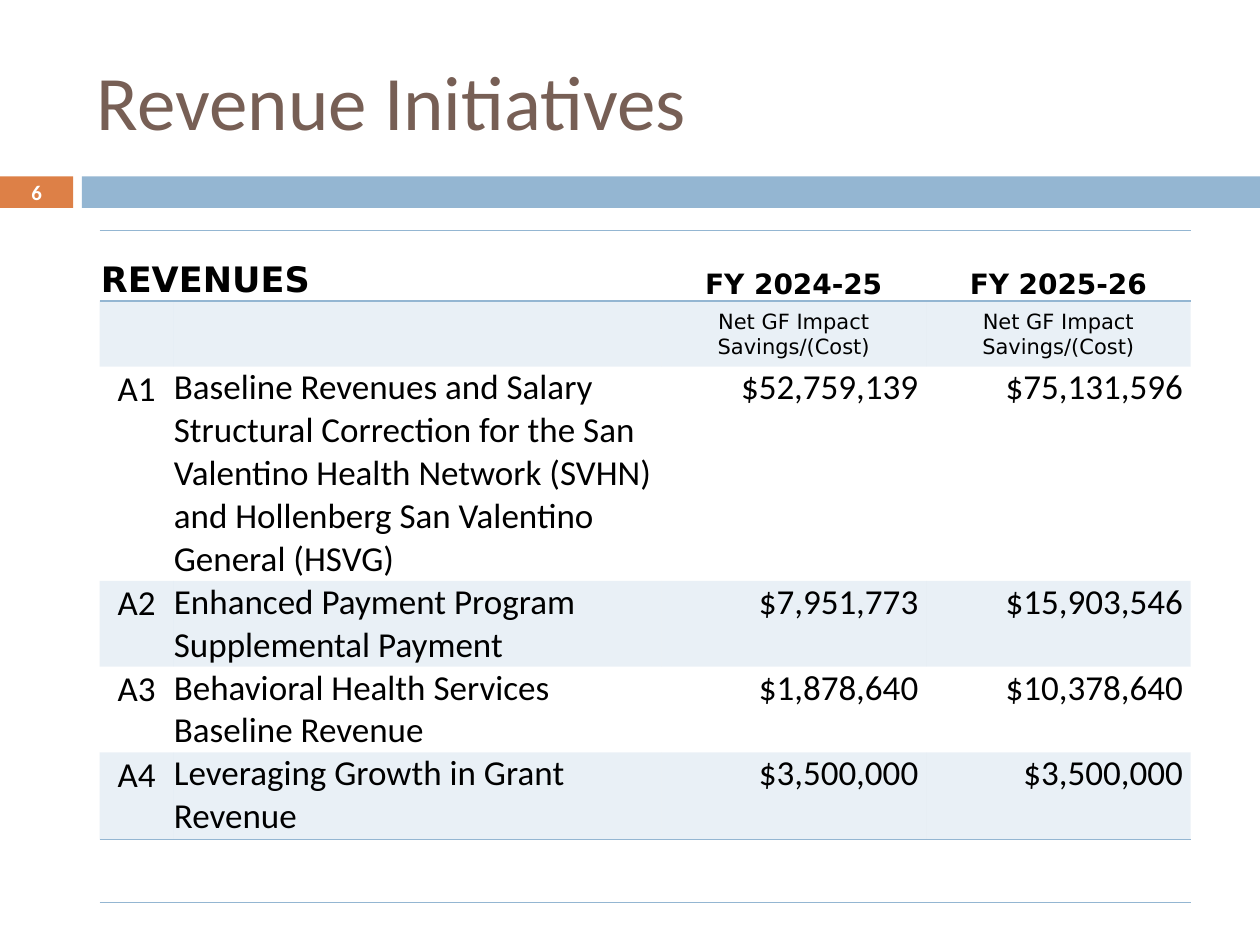
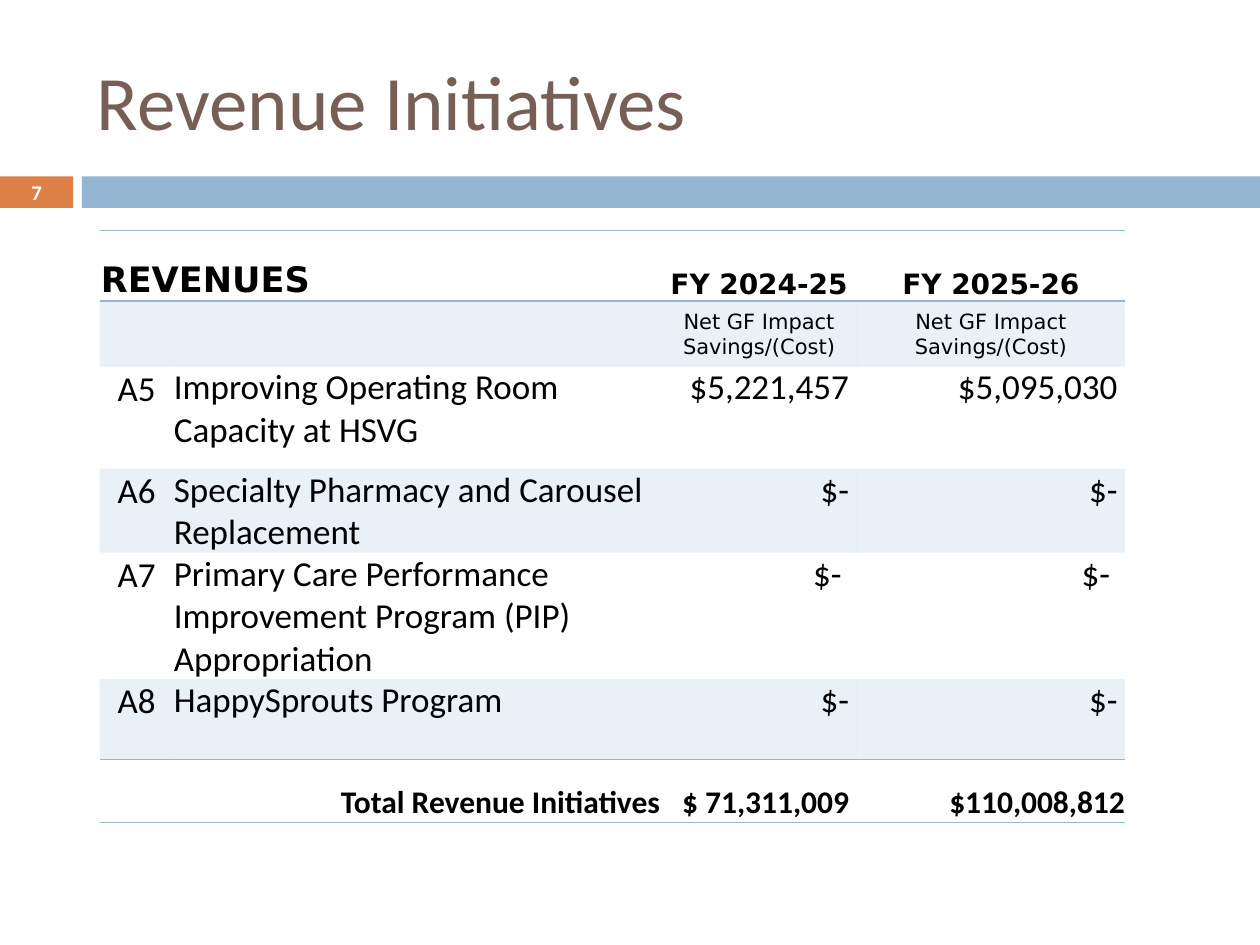
"""Builds two slides of revenue initiative tables."""
from dataclasses import dataclass

from lxml import etree
from pptx import Presentation
from pptx.dml.color import RGBColor
from pptx.enum.shapes import MSO_SHAPE
from pptx.enum.text import MSO_ANCHOR, PP_ALIGN
from pptx.oxml.ns import qn
from pptx.util import Inches, Pt

BLUE = RGBColor(0x94, 0xB6, 0xD2)
ORANGE = RGBColor(0xDD, 0x80, 0x47)
BROWN = RGBColor(0x77, 0x5F, 0x55)
BLACK = RGBColor(0, 0, 0)
WHITE = RGBColor(0xFF, 0xFF, 0xFF)

BODY_FONT = "Calibri"
HEAD_FONT = "DejaVu Sans"
LEFT, CENTER, RIGHT = PP_ALIGN.LEFT, PP_ALIGN.CENTER, PP_ALIGN.RIGHT
TOP, MIDDLE, BOTTOM = MSO_ANCHOR.TOP, MSO_ANCHOR.MIDDLE, MSO_ANCHOR.BOTTOM
RECTANGLE = MSO_SHAPE.RECTANGLE

TITLE = "Revenue Initiatives"
YEARS = ("FY 2024-25", "FY 2025-26")
IMPACT = "Net GF Impact\nSavings/(Cost)"
TINT_ALPHA = 20
PAD = 0.01
AMOUNT_GAP = 0.06


@dataclass(frozen=True)
class Initiative:
    """One revenue row with its amount for each year."""
    code: str
    name: str
    amounts: tuple[str, str]
    gap: float = AMOUNT_GAP


@dataclass(frozen=True)
class RevenueSlide:
    """Content and table dimensions of one slide."""
    number: int
    col_widths: tuple[float, ...]
    row_heights: tuple[float, ...]
    table_height: float
    initiatives: tuple[Initiative, ...]
    total: tuple[str, ...] = ()


SLIDES = (
    RevenueSlide(
        6, (0.59, 3.87, 2.1, 2.1), (0.56, 0.52, 0.81, 0.41, 0.49, 0.69, 0.5), 5.26,
        (
            Initiative("A1", "Baseline Revenues and Salary Structural Correction for the "
                       "San Valentino Health Network (SVHN) and Hollenberg San Valentino "
                       "General (HSVG)", ("$52,759,139", "$75,131,596")),
            Initiative("A2", "Enhanced Payment Program Supplemental Payment",
                       ("$7,951,773", "$15,903,546")),
            Initiative("A3", "Behavioral Health Services Baseline Revenue",
                       ("$1,878,640", "$10,378,640")),
            Initiative("A4", "Leveraging Growth in Grant Revenue",
                       ("$3,500,000", "$3,500,000")),
        ),
    ),
    RevenueSlide(
        7, (0.59, 3.87, 1.55, 2.13), (0.56, 0.52, 0.81, 0.41, 0.49, 0.64, 0.5), 4.7,
        (
            Initiative("A5", "Improving Operating Room Capacity at HSVG",
                       ("$5,221,457", "$5,095,030")),
            Initiative("A6", "Specialty Pharmacy and Carousel Replacement", ("$-", "$-")),
            Initiative("A7", "Primary Care Performance Improvement Program (PIP) "
                       "Appropriation", ("$-", "$-"), gap=2 * AMOUNT_GAP),
            Initiative("A8", "HappySprouts Program", ("$-", "$-")),
        ),
        ("Total Revenue Initiatives", "$ 71,311,009", "$110,008,812"),
    ),
)


def write(tf, text: str, *, size: float = 20, font: str = BODY_FONT,
          color: RGBColor = BLACK, bold: bool = False, align=LEFT) -> None:
    """Fill a text frame with one paragraph per line of text."""
    for i, line in enumerate(text.split("\n")):
        p = tf.add_paragraph() if i else tf.paragraphs[0]
        p.alignment = align
        r = p.add_run()
        r.text = line
        r.font.size = Pt(size)
        r.font.name = font
        r.font.bold = bold
        r.font.color.rgb = color


def write_cell(cell, text: str, *, anchor=TOP, pad: float = 0, right: float | None = None,
               **style) -> None:
    """Write text into a table cell with its anchor and margins."""
    cell.vertical_anchor = anchor
    cell.margin_left = cell.margin_top = Inches(pad)
    cell.margin_right = Inches(pad if right is None else right)
    cell.margin_bottom = 0
    write(cell.text_frame, text, **style)


def add_band(s, left: float, width: float, color: RGBColor) -> None:
    """Draw one piece of the band below the title."""
    sp = s.shapes.add_shape(RECTANGLE, Inches(left), Inches(1.4), Inches(width), Inches(0.25))
    sp.shadow.inherit = False
    sp.fill.solid()
    sp.fill.fore_color.rgb = color
    sp.line.fill.background()


def add_text(s, text: str, box: tuple[float, ...], **style) -> None:
    """Add a wrapping, vertically centred text box."""
    tf = s.shapes.add_textbox(*map(Inches, box)).text_frame
    tf.word_wrap = True
    tf.vertical_anchor = MIDDLE
    write(tf, text, **style)


def set_borders(cell, ruled: set[str]) -> None:
    """Rule the named sides of a cell and clear the others."""
    tc_pr = cell._tc.get_or_add_tcPr()
    for side in ("L", "R", "T", "B"):
        ln = etree.SubElement(tc_pr, qn(f"a:ln{side}"), w=str(Pt(1)))
        if side in ruled:
            fill = etree.SubElement(ln, qn("a:solidFill"))
            etree.SubElement(fill, qn("a:srgbClr"), val=str(BLUE))
        else:
            etree.SubElement(ln, qn("a:noFill"))


def set_tint(cell) -> None:
    """Fill a cell with translucent blue."""
    cell.fill.solid()
    cell.fill.fore_color.rgb = BLUE
    color = cell._tc.tcPr.find(f"{qn('a:solidFill')}/{qn('a:srgbClr')}")
    etree.SubElement(color, qn("a:alpha"), val=str(TINT_ALPHA * 1000))


def format_grid(table) -> None:
    """Apply rules around the header and total rows and tint alternate rows."""
    last = len(table.rows) - 1
    rules = {0, 1, last, last + 1}
    for row in range(last + 1):
        ruled = {side for side, edge in (("T", row), ("B", row + 1)) if edge in rules}
        for col in range(len(table.columns)):
            cell = table.cell(row, col)
            set_borders(cell, ruled)
            if row % 2:
                set_tint(cell)
            else:
                cell.fill.background()
    for row in (0, last):
        table.cell(row, 0).merge(table.cell(row, 1))


def add_revenue_table(s, data: RevenueSlide) -> None:
    """Add the table of initiatives and its optional total."""
    sp = s.shapes.add_table(len(data.row_heights), len(data.col_widths), Inches(0.79),
                            Inches(1.83), Inches(sum(data.col_widths)),
                            Inches(data.table_height))
    table = sp.table
    table.first_row = table.horz_banding = False
    for column, width in zip(table.columns, data.col_widths):
        column.width = Inches(width)
    for row, height in zip(table.rows, data.row_heights):
        row.height = Inches(height)
    sp.height = Inches(data.table_height)
    format_grid(table)

    write_cell(table.cell(0, 0), "REVENUES", anchor=BOTTOM, pad=PAD, font=HEAD_FONT, bold=True)
    for col, year in enumerate(YEARS, 2):
        write_cell(table.cell(0, col), year, anchor=BOTTOM, pad=PAD, size=16,
                   font=HEAD_FONT, bold=True, align=CENTER)
        write_cell(table.cell(1, col), IMPACT, anchor=MIDDLE, pad=PAD, size=12,
                   font=HEAD_FONT, align=CENTER)

    for row, item in enumerate(data.initiatives, 2):
        write_cell(table.cell(row, 0), item.code, pad=PAD, align=CENTER)
        write_cell(table.cell(row, 1), item.name)
        for col, amount in enumerate(item.amounts, 2):
            write_cell(table.cell(row, col), amount, right=item.gap, align=RIGHT)

    last = len(data.row_heights) - 1
    for col, text, gap in zip((0, 2, 3), data.total, (PAD, AMOUNT_GAP, 0)):
        write_cell(table.cell(last, col), text, anchor=BOTTOM, right=gap, size=18,
                   bold=True, align=RIGHT)


def add_revenue_slide(prs, data: RevenueSlide) -> None:
    """Add a slide with the band, table, title and number."""
    s = prs.slides.add_slide(prs.slide_layouts[6])
    add_band(s, 0, 0.58, ORANGE)
    add_band(s, 0.65, 9.35, BLUE)
    add_revenue_table(s, data)
    add_text(s, TITLE, (0.67, 0.25, 8.92, 1.08), size=44, color=BROWN)
    add_text(s, str(data.number), (0, 1.39, 0.58, 0.27), size=11.9, color=WHITE,
             bold=True, align=CENTER)


def main() -> None:
    """Build and save the presentation."""
    prs = Presentation()
    prs.slide_width, prs.slide_height = Inches(10), Inches(7.5)
    for data in SLIDES:
        add_revenue_slide(prs, data)
    prs.save("out.pptx")


if __name__ == "__main__":
    main()
